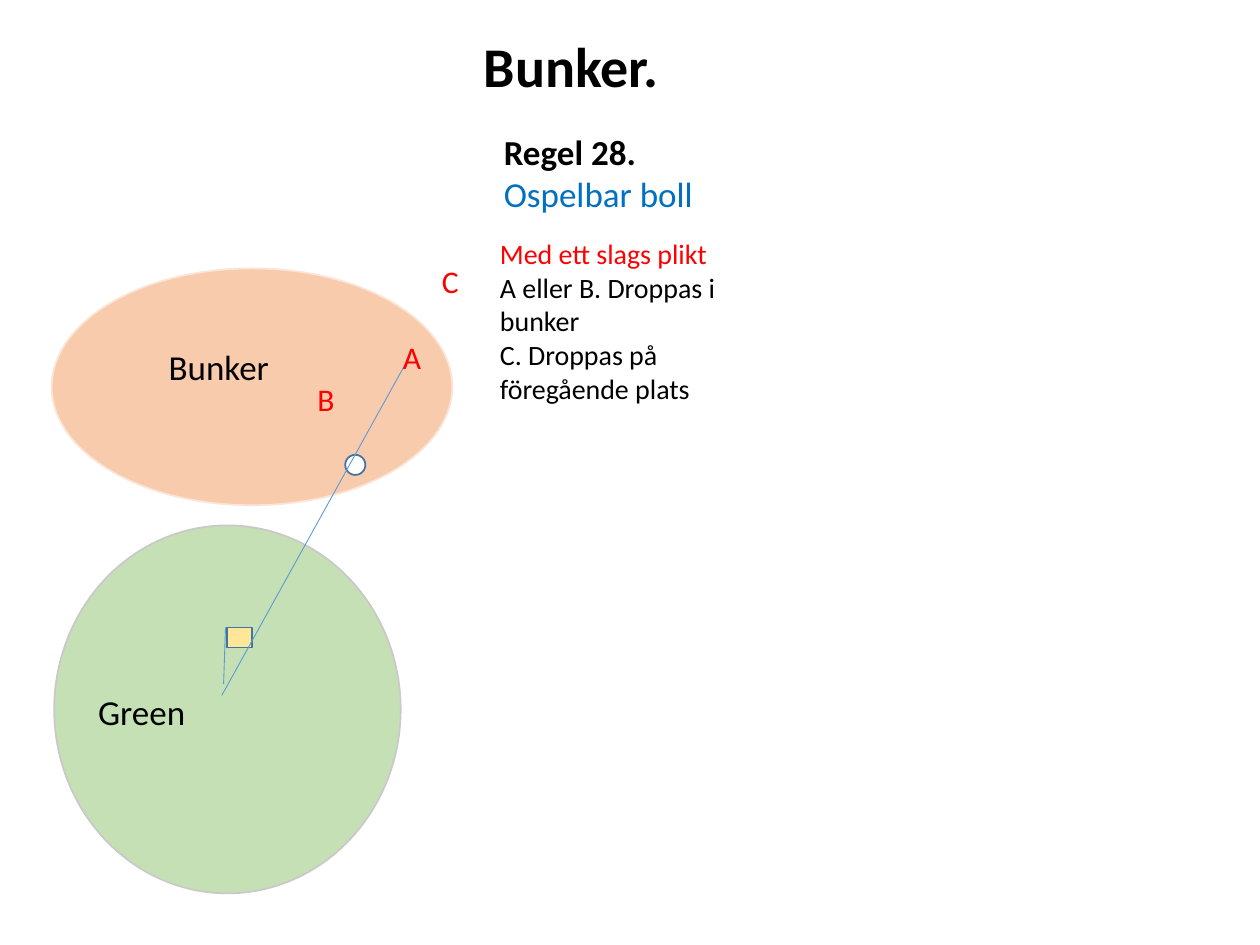
"""Build the golf slide about an unplayable ball in a bunker."""
from lxml import etree
from pptx import Presentation
from pptx.dml.color import RGBColor
from pptx.enum.shapes import MSO_CONNECTOR, MSO_SHAPE
from pptx.enum.text import MSO_ANCHOR, PP_ALIGN
from pptx.oxml.ns import qn
from pptx.util import Inches, Pt

OVAL, RECTANGLE = MSO_SHAPE.OVAL, MSO_SHAPE.RECTANGLE
STRAIGHT = MSO_CONNECTOR.STRAIGHT
TOP, LEFT = MSO_ANCHOR.TOP, PP_ALIGN.LEFT

BLACK = RGBColor(0x00, 0x00, 0x00)
WHITE = RGBColor(0xFF, 0xFF, 0xFF)
RED = RGBColor(0xFF, 0x00, 0x00)
RULE_BLUE = RGBColor(0x00, 0x70, 0xC0)
LINE_BLUE = RGBColor(0x5B, 0x9B, 0xD5)
EDGE_BLUE = RGBColor(0x43, 0x73, 0x9E)
SAND = RGBColor(0xF8, 0xCB, 0xAD)
SAND_EDGE = RGBColor(0xFB, 0xE5, 0xD6)
GRASS = RGBColor(0xC5, 0xE0, 0xB4)
GRASS_EDGE = RGBColor(0xC9, 0xC9, 0xC9)
FLAG_YELLOW = RGBColor(0xFF, 0xE6, 0x99)


def add_area(shapes, kind, box, fill, edge=None):
    """Add a filled preset shape, outlined when an edge colour is given."""
    area = shapes.add_shape(kind, *map(Inches, box))
    area.shadow.inherit = False
    area.fill.solid()
    area.fill.fore_color.rgb = fill
    if edge is None:
        area.line.fill.background()
    else:
        area.line.color.rgb = edge
        area.line.width = Pt(1)
    return area


def add_thin_line(shapes, start, end):
    """Add a thin blue straight line without a shadow."""
    line = shapes.add_connector(STRAIGHT, *map(Inches, start + end))
    line.line.color.rgb = LINE_BLUE
    line.line.width = Pt(0.5)
    etree.SubElement(line._element.spPr, qn("a:effectLst"))


def write(shape, paragraphs, size):
    """Fill a shape with paragraphs, each a list of (text, colour, bold) runs."""
    frame = shape.text_frame
    for name, value in {"word_wrap": True, "vertical_anchor": TOP}.items():
        setattr(frame, name, value)
    for index, runs in enumerate(paragraphs):
        paragraph = frame.add_paragraph() if index else frame.paragraphs[0]
        paragraph.alignment = LEFT
        for text, colour, bold in runs:
            run = paragraph.add_run()
            run.text = text
            run.font.color.rgb = colour
            for name, value in {"name": "Calibri", "size": Pt(size), "bold": bold}.items():
                setattr(run.font, name, value)


def add_text(shapes, box, paragraphs, size):
    """Add a wrapping text box."""
    write(shapes.add_textbox(*map(Inches, box)), paragraphs, size)


def set_title(title):
    """Place and format the title placeholder."""
    bounds = {"left": 2.74, "top": 0.2, "width": 3.49, "height": 0.64}
    for name, value in bounds.items():
        setattr(title, name, Inches(value))
    title.text_frame.margin_left = Inches(1.1)
    write(title, [[("Bunker.", BLACK, True)]], 32)


def add_green(shapes):
    """Add the grouped green with its flag and label."""
    green = shapes.add_group_shape().shapes
    add_area(green, OVAL, (0.43, 4.17, 2.75, 2.92), GRASS, GRASS_EDGE)
    add_thin_line(green, (1.77, 5.57), (1.79, 4.98))
    add_area(green, RECTANGLE, (1.8, 4.98, 0.2, 0.16), FLAG_YELLOW, EDGE_BLUE)
    label = add_area(green, RECTANGLE, (0.68, 5.43, 1.22, 0.44), GRASS)
    write(label, [[("Green", BLACK, False)]], 20)


def main():
    """Build and save the slide."""
    deck = Presentation()
    deck.slide_width, deck.slide_height = Inches(10), Inches(7.5)
    slide = deck.slides.add_slide(deck.slide_layouts[5])
    shapes = slide.shapes
    set_title(shapes.title)

    add_area(shapes, OVAL, (0.41, 2.13, 3.18, 1.88), SAND, SAND_EDGE)
    add_green(shapes)
    add_text(shapes, (1.24, 2.69, 1.31, 0.44), [[("Bunker", BLACK, False)]], 20)
    rule = [("Regel 28. ", BLACK, True), ("Ospelbar boll", RULE_BLUE, False)]
    add_text(shapes, (3.9, 0.99, 1.73, 0.77), [rule], 20)

    add_area(shapes, OVAL, (2.74, 3.61, 0.16, 0.16), WHITE, EDGE_BLUE)
    add_thin_line(shapes, (1.76, 5.52), (3.25, 2.83))

    options = [
        [("Med ett slags plikt", RED, False)],
        [("A eller B. Droppas i bunker", BLACK, False)],
        [("C. Droppas på föregående plats", BLACK, False)],
    ]
    add_text(shapes, (3.87, 1.83, 2.36, 1.45), options, 16)
    drops = {"A": (3.1, 2.63, 0.3), "B": (2.42, 2.97, 0.39), "C": (3.41, 2.03, 0.36)}
    for letter, place in drops.items():
        add_text(shapes, (*place, 0.4), [[(letter, RED, False)]], 18)

    deck.save("out.pptx")


if __name__ == "__main__":
    main()
